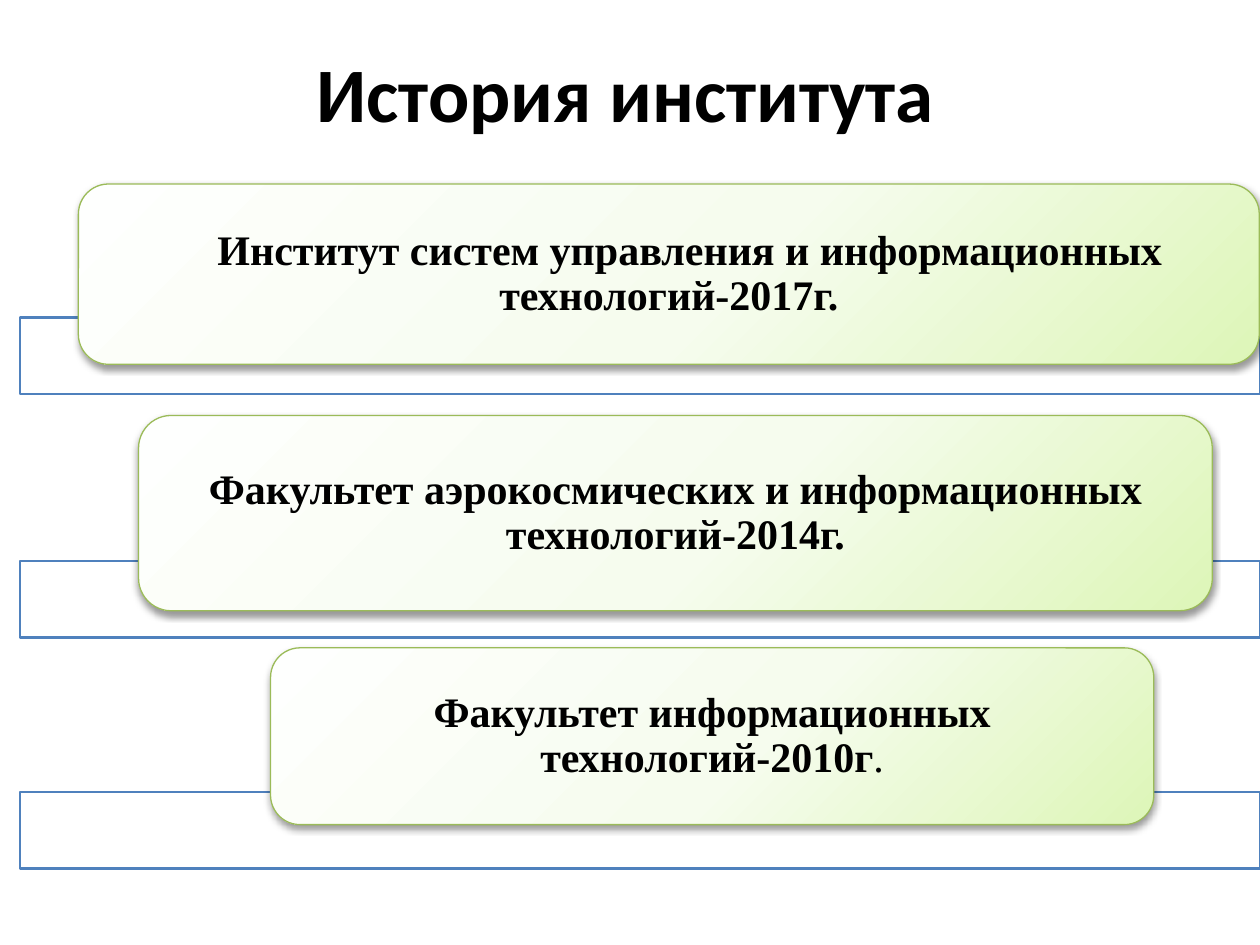
from dataclasses import dataclass

from lxml import etree
from pptx import Presentation
from pptx.dml.color import RGBColor
from pptx.enum.shapes import MSO_SHAPE
from pptx.enum.text import MSO_ANCHOR, PP_ALIGN
from pptx.oxml import parse_xml
from pptx.oxml.ns import qn
from pptx.util import Pt

RECT, ROUNDED = MSO_SHAPE.RECTANGLE, MSO_SHAPE.ROUNDED_RECTANGLE
MIDDLE, CENTER = MSO_ANCHOR.MIDDLE, PP_ALIGN.CENTER
TITLE_ONLY = 5
DRAWING_NS = "http://schemas.openxmlformats.org/drawingml/2006/main"


@dataclass(frozen=True)
class Theme:
    title_font: str = "Calibri"
    body_font: str = "Times New Roman"
    title_size: int = 44
    body_size: int = 24
    text: str = "000000"
    bar_fill: str = "FFFFFF"
    bar_line: str = "4F81BD"
    card_line: str = "9BBB59"
    card_stops: tuple = ((0, "FEFFFE"), (55, "F6FCEE"), (100, "DDF6B8"))
    shadow: str = "000000"


def add_run(p, text, *, font, size, color, bold=True):
    r = p.add_run()
    r.text = text
    r.font.name, r.font.size, r.font.bold = font, Pt(size), bold
    r.font.color.rgb = RGBColor.from_string(color)


class SlideBuilder:
    def __init__(self, slide, theme):
        self.s, self.theme = slide, theme

    def title(self, text, left, top, width, height):
        t, sp = self.theme, self.s.shapes.title
        sp.left, sp.top, sp.width, sp.height = map(Pt, (left, top, width, height))
        sp.text_frame.vertical_anchor = MIDDLE
        p = sp.text_frame.paragraphs[0]
        p.alignment = CENTER
        add_run(p, text, font=t.title_font, size=t.title_size, color=t.text)

    def shape(self, kind, box, line, line_width):
        sp = self.s.shapes.add_shape(kind, *map(Pt, box))
        sp.shadow.inherit = False
        sp.line.color.rgb = RGBColor.from_string(line)
        sp.line.width = Pt(line_width)
        return sp

    def bar(self, *box):
        t = self.theme
        sp = self.shape(RECT, box, t.bar_line, 1.5)
        sp.fill.solid()
        sp.fill.fore_color.rgb = RGBColor.from_string(t.bar_fill)
        color = sp._element.spPr.find(qn("a:solidFill"))[0]
        etree.SubElement(color, qn("a:alpha"), val="90000")

    def card(self, box, runs, indent=0):
        t = self.theme
        sp = self.shape(ROUNDED, box, t.card_line, 0.75)
        self.gradient(sp)
        self.drop_shadow(sp)
        tf = sp.text_frame
        tf.word_wrap, tf.vertical_anchor = True, MIDDLE
        tf.margin_left = tf.margin_right = Pt(18.7)
        tf.margin_top = tf.margin_bottom = 0
        p = tf.paragraphs[0]
        p.alignment, p.line_spacing = CENTER, 0.9
        if indent:
            p._p.get_or_add_pPr().set("indent", str(Pt(indent)))
        for text, bold in runs:
            add_run(p, text, font=t.body_font, size=t.body_size,
                    color=t.text, bold=bold)

    def gradient(self, sp):
        # Circular gradient centred beyond the top left corner
        stops = "".join(
            f'<a:gs pos="{pos * 1000}"><a:srgbClr val="{color}"/></a:gs>'
            for pos, color in self.theme.card_stops)
        sp.fill.gradient()
        spPr = sp._element.spPr
        spPr.replace(spPr.find(qn("a:gradFill")), parse_xml(
            f'<a:gradFill xmlns:a="{DRAWING_NS}" rotWithShape="1">'
            f'<a:gsLst>{stops}</a:gsLst><a:path path="circle">'
            '<a:fillToRect l="-40000" t="-90000" r="140000" b="190000"/>'
            '</a:path></a:gradFill>'))

    def drop_shadow(self, sp):
        effects = sp._element.spPr.find(qn("a:effectLst"))
        shadow = etree.SubElement(
            effects, qn("a:outerShdw"), blurRad=str(Pt(4.1)),
            dist=str(Pt(2)), dir="5400000", rotWithShape="0")
        color = etree.SubElement(shadow, qn("a:srgbClr"), val=self.theme.shadow)
        etree.SubElement(color, qn("a:alpha"), val="40000")


def main():
    prs = Presentation()
    prs.slide_width, prs.slide_height = Pt(720), Pt(540)
    slide = prs.slides.add_slide(prs.slide_layouts[TITLE_ONLY])
    builder = SlideBuilder(slide, Theme())

    # Heading
    builder.title("История института", 31, 21.6, 653, 61.2)

    # Milestones, newest first: bar top, card box, text runs, first-line indent
    milestones = [
        (181.4, (44.8, 105.2, 674.8, 103),
         [("Институт систем управления и информационных технологий-2017г.", True)], 24),
        (320.6, (79.2, 237.4, 613.6, 111.6),
         [("Факультет аэрокосмических и информационных технологий-2014г.", True)], 0),
        (452.6, (154.6, 370.2, 504.7, 101),
         [("Факультет информационных технологий-2010г", True), (".", False)], 0),
    ]
    for bar_top, box, runs, indent in milestones:
        builder.bar(11.4, bar_top, 708.6, 43.8)
        builder.card(box, runs, indent)

    prs.save("out.pptx")


if __name__ == "__main__":
    main()
